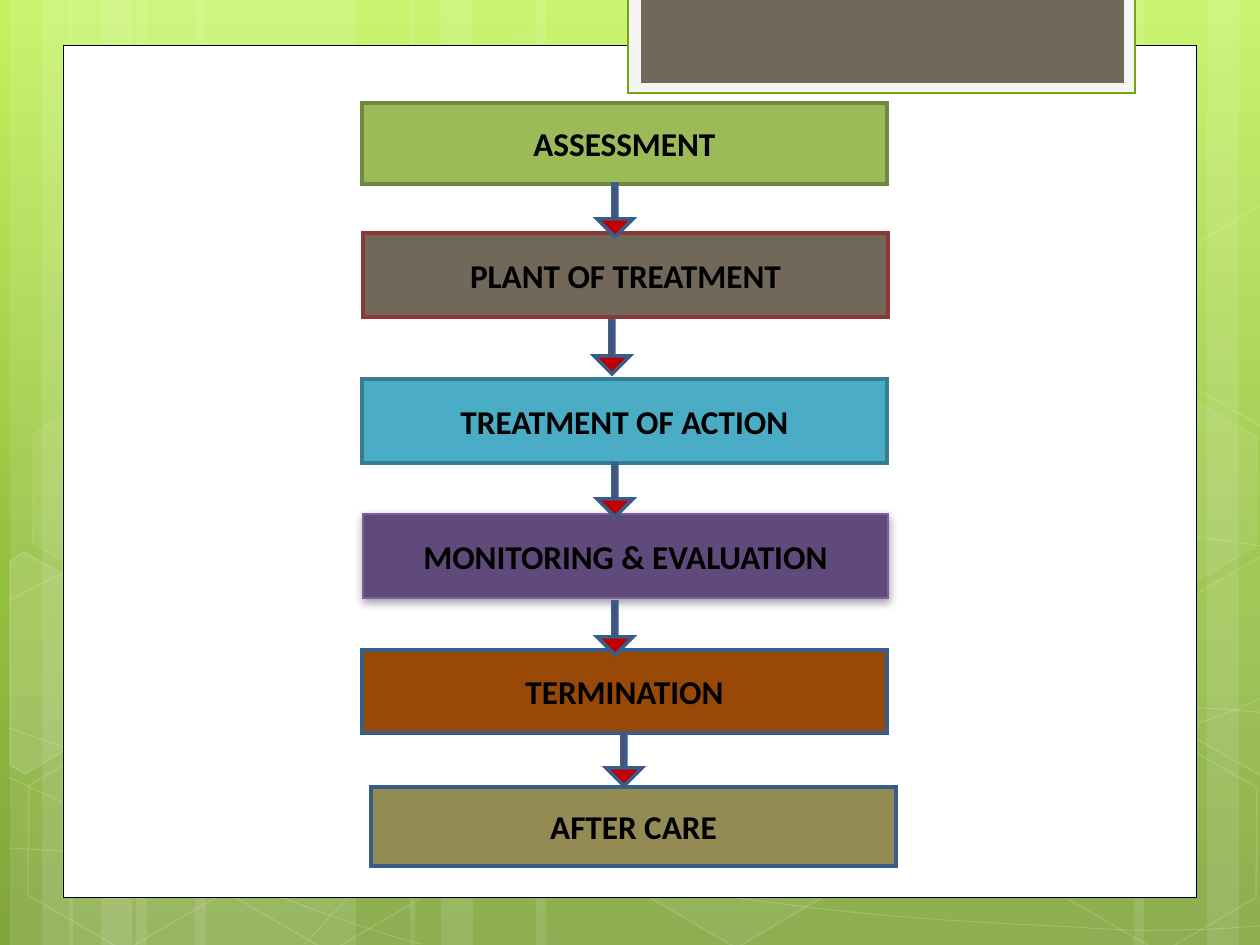
import copy

import pptx
import pptx.dml.color
import pptx.enum.shapes
import pptx.enum.text
import pptx.oxml
import pptx.oxml.ns
import pptx.util

PX = 914400 / 126
SHAPE = pptx.enum.shapes.MSO_SHAPE
WHITE = "FFFFFF"
BLUE = "385D8A"
GRADIENT = [("C3F35F", 0), ("93BF3F", 0.62), ("81A53E", 1)]
STRIPES = [(136, 220), (10, 63), (42, 105), (195, 220), (69, 63), (101, 105),
           (924, 220), (1207, 63), (1134, 105), (536, 388), (410, 63), (441, 105)]
CURVES = [
    [(9, 848), (77, 852), (145, 856), (239, 854), (334, 853), (451, 851), (577, 838),
     (703, 825), (882, 801), (998, 777), (1113, 753), (1231, 716), (1269, 694)],
    [(9, 601), (45, 581), (82, 562), (152, 543), (224, 523), (326, 496), (437, 488),
     (549, 479), (685, 478), (824, 488), (963, 498), (1193, 537), (1269, 547)],
    [(8, 777), (160, 847), (311, 916), (421, 944)],
    [(9, 728), (48, 742), (88, 756), (161, 776), (234, 795), (344, 827), (450, 848),
     (554, 869), (687, 892), (791, 905), (896, 919), (1008, 924), (1075, 927),
     (1140, 932), (1158, 930), (1191, 930), (1223, 929), (1246, 927), (1269, 925)],
    [(305, 944), (328, 919), (350, 893), (381, 871), (411, 848), (454, 823), (489, 805),
     (524, 788), (546, 780), (592, 767), (638, 755), (722, 737), (766, 728),
     (811, 719), (818, 719), (857, 717), (896, 713), (958, 709), (1000, 708),
     (1045, 707), (1116, 708), (1116, 708), (1144, 708), (1173, 708), (1201, 708),
     (1223, 709), (1245, 711), (1256, 712), (1268, 713), (1264, 712), (1268, 713)],
]
HEXAGONS = [(421, 45, 4, 8), (626, 742, 6, 12), (14, 745, 0, 12), (18, 393, 7, 8),
            (219, 746, 0, 12), (1051, 747, 0, 12), (1051, 396, 7, 8)]
CUT_HEXAGONS = [
    ([(10, 561), (24, 552), (121, 607), (120, 718), (25, 774), (10, 765)], 10),
    ([(1167, 611), (1261, 556), (1271, 562), (1271, 772), (1263, 777), (1167, 722)], 4),
    ([(1167, 261), (1261, 205), (1273, 212), (1271, 422), (1263, 427), (1167, 372)], 0),
]
PANELS = [((63, 45, 1134, 853), WHITE, "000000", 0.5),
          ((628, -3, 507, 96), "F5F5F5", "74A510", 1.25),
          ((641, -3, 483, 86), "71685A", None, 0)]
STEPS = [("ASSESSMENT", 362, 103, 81, "9BBB59", "71893F", 2),
         ("PLANT OF TREATMENT", 363, 233, 84, "71685A", "8C3836", 2),
         ("TREATMENT OF ACTION", 362, 379, 84, "4BACC6", "357D91", 2),
         ("MONITORING & EVALUATION", 363, 514, 84, "604A7B", "7D60A0", 0.75),
         ("TERMINATION", 362, 650, 83, "984807", BLUE, 2),
         ("AFTER CARE", 371, 787, 79, "948A54", BLUE, 2)]
ARROWS = [(597, 184), (594, 321), (597, 464), (597, 602), (606, 733)]


def px(n):
    """Turn pixels into EMU."""
    return pptx.util.Emu(round(n * PX))


def rgb(value):
    """Turn a hex string into a colour."""
    return pptx.dml.color.RGBColor.from_string(value)


def qn(tag):
    """Return the full name of a drawing element."""
    return pptx.oxml.ns.qn("a:" + tag)


def xml(text):
    """Parse one element in the drawing namespace."""
    head, tail = text.split(" ", 1)
    return pptx.oxml.parse_xml(f"{head} {pptx.oxml.ns.nsdecls('a')} {tail}")


def set_alpha(parent, percent):
    """Make the solid colour of an element translucent."""
    parent.find(qn("solidFill"))[0].append(xml(f'<a:alpha val="{percent * 1000}"/>'))


def style(sp, fill=None, line=None, width=1, fill_alpha=100, line_alpha=100):
    """Set the fill, outline and transparency of a shape."""
    sp.shadow.inherit = False
    if fill and fill_alpha:
        sp.fill.solid()
        sp.fill.fore_color.rgb = rgb(fill)
        if fill_alpha < 100:
            set_alpha(sp.element.spPr, fill_alpha)
    else:
        sp.fill.background()
    if line:
        sp.line.color.rgb = rgb(line)
        sp.line.width = pptx.util.Pt(width)
        ln = sp.element.spPr.find(qn("ln"))
        if line_alpha < 100:
            set_alpha(ln, line_alpha)
        ln.append(xml('<a:miter lim="800000"/>'))
    else:
        sp.line.fill.background()


def add_preset(s, kind, box, adjustments=(), **look):
    """Add a styled preset shape."""
    sp = s.shapes.add_shape(kind, *map(px, box))
    for i, value in enumerate(adjustments):
        sp.adjustments[i] = value
    style(sp, **look)
    return sp


def add_outline(s, points, close, **look):
    """Add a styled freeform through the points."""
    start, *rest = [(px(x), px(y)) for x, y in points]
    builder = s.shapes.build_freeform(*start)
    builder.add_line_segments(rest, close=close)
    sp = builder.convert_to_shape()
    style(sp, **look)
    return sp


def bend(sp):
    """Join each three line segments of a freeform into one cubic curve."""
    lines = list(sp.element.iter(qn("lnTo")))
    for i in range(0, len(lines), 3):
        curve = xml("<a:cubicBezTo />")
        lines[i].addprevious(curve)
        for segment in lines[i:i + 3]:
            curve.append(segment[0])
            segment.getparent().remove(segment)


def set_background(s):
    """Fill the background with a vertical gradient."""
    fill = s.background.fill
    fill.gradient()
    fill.gradient_angle = 270
    first = next(s.element.iter(qn("gs")))
    first.addnext(copy.deepcopy(first))
    for stop, (color, position) in zip(fill.gradient_stops, GRADIENT):
        stop.color.rgb = rgb(color)
        stop.position = position


def add_backdrop(s):
    """Add the translucent stripes, curves and hexagons."""
    for x, w in STRIPES:
        add_preset(s, SHAPE.RECTANGLE, (x, 0, w, 945), fill=WHITE, fill_alpha=10)
    for knots in CURVES:
        bend(add_outline(s, knots, False, line=WHITE, width=0.5, line_alpha=20))
    for x, y, fill_alpha, line_alpha in HEXAGONS:
        sp = add_preset(s, SHAPE.HEXAGON, (x, y, 220, 191), (0.285, 1.155), fill=WHITE,
                        line=WHITE, fill_alpha=fill_alpha, line_alpha=line_alpha)
        sp.rotation = 30
    for points, fill_alpha in CUT_HEXAGONS:
        add_outline(s, points, True, fill=WHITE, line=WHITE,
                    fill_alpha=fill_alpha, line_alpha=12)


def add_step(s, text, x, y, h, fill, line, width):
    """Add one labelled box of the flow."""
    sp = add_preset(s, SHAPE.RECTANGLE, (x, y, 525, h), fill=fill, line=line, width=width)
    tf = sp.text_frame
    tf.word_wrap = True
    tf.vertical_anchor = pptx.enum.text.MSO_ANCHOR.MIDDLE
    p = tf.paragraphs[0]
    p.alignment = pptx.enum.text.PP_ALIGN.CENTER
    r = p.add_run()
    r.text = text
    for name, value in {"name": "Calibri", "size": pptx.util.Pt(19), "bold": True}.items():
        setattr(r.font, name, value)
    r.font.color.rgb = rgb("000000")
    return sp


def add_shadow(sp):
    """Give a shape a soft shadow below it."""
    sp.element.spPr.find(qn("effectLst")).append(xml(
        '<a:outerShdw blurRad="63500" dist="20320" dir="5400000" rotWithShape="0">'
        '<a:srgbClr val="000000"><a:alpha val="38000"/></a:srgbClr></a:outerShdw>'))


def main():
    """Build the slide and save it."""
    prs = pptx.Presentation()
    prs.slide_width, prs.slide_height = px(1260), px(945)
    s = prs.slides.add_slide(prs.slide_layouts[6])
    set_background(s)
    add_backdrop(s)
    for box, fill, line, width in PANELS:
        add_preset(s, SHAPE.RECTANGLE, box, fill=fill, line=line, width=width)
    boxes = [add_step(s, *step) for step in STEPS]
    add_shadow(boxes[3])
    for x, y in ARROWS:
        add_preset(s, SHAPE.DOWN_ARROW, (x, y, 36, 53), (0.108, 0.5),
                   fill="C00000", line=BLUE, width=2)
    prs.save("out.pptx")


if __name__ == "__main__":
    main()
